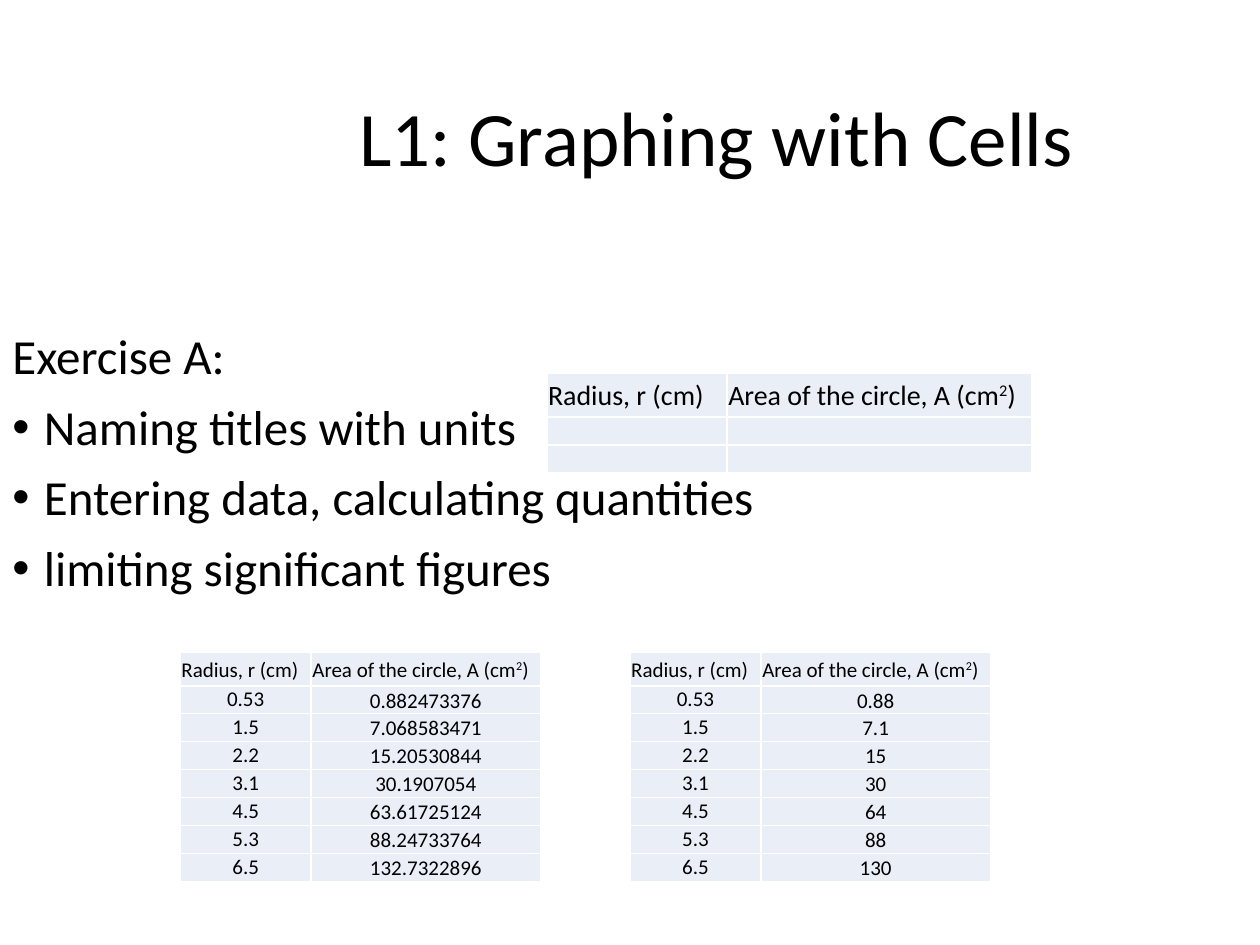
from lxml.etree import SubElement as Sub
from pptx import Presentation
from pptx.dml.color import RGBColor as Rgb
from pptx.enum.text import MSO_ANCHOR as Anchor, PP_ALIGN as Align
from pptx.oxml.ns import qn
from pptx.util import Inches, Pt

WIDE, HIGH = Inches(10), Inches(7.5)
FONT = "Calibri"
HUES = {"text": "000000", "cell": "EAEFF7", "edge": "FFFFFF"}
HEAD = [["Radius, r (cm)"], ["Area of the circle, A (cm", "2", ")"]]
RADII = ["0.53", "1.5", "2.2", "3.1", "4.5", "5.3", "6.5"]
FULL = ["0.882473376", "7.068583471", "15.20530844", "30.1907054",
        "63.61725124", "88.24733764", "132.7322896"]
SHORT = ["0.88", "7.1", "15", "30", "64", "88", "130"]
ITEMS = ["Naming titles with units", "Entering data, calculating quantities",
         "limiting significant figures"]


def across(part):
    return int(WIDE * part / 100)


def down(part):
    return int(HIGH * part / 100)


def add_run(para, text, size, raised=False):
    run = para.add_run()
    run.text = text
    font = run.font
    font.name, font.size = FONT, Pt(size)
    font.color.rgb = Rgb.from_string(HUES["text"])
    if raised:
        run._r.get_or_add_rPr().set("baseline", "30000")


def add_title(slide, text):
    title = slide.shapes.title
    title.left, title.top = across(27.5), down(5.33)
    title.width, title.height = across(70.2), down(19.33)
    frame = title.text_frame
    frame.vertical_anchor = Anchor.MIDDLE
    para = frame.paragraphs[0]
    para.alignment, para.line_spacing = Align.LEFT, 0.9
    add_run(para, text, 44)


def add_bullet(para):
    props = para._p.get_or_add_pPr()
    props.set("marL", str(Inches(0.25)))
    props.set("indent", str(-Inches(0.25)))
    Sub(props, qn("a:buFont")).set("typeface", "Arial")
    Sub(props, qn("a:buChar")).set("char", "•")


def add_list(slide, lead, items):
    box = slide.shapes.add_textbox(0, down(34.53), across(98.8), down(63.47))
    frame = box.text_frame
    frame.word_wrap = True
    first = frame.paragraphs[0]
    first.line_spacing = 0.9
    add_run(first, lead, 28)
    for item in items:
        para = frame.add_paragraph()
        add_bullet(para)
        para.line_spacing, para.space_before = 0.9, Pt(10)
        add_run(para, item, 28)


def style_cell(cell):
    cell.margin_left = cell.margin_right = cell.margin_top = Inches(0.01)
    cell.margin_bottom = 0
    props = cell._tc.get_or_add_tcPr()
    for side in ("lnL", "lnR", "lnT", "lnB"):
        line = Sub(props, qn(f"a:{side}"), w=str(Pt(1)))
        paint = Sub(line, qn("a:solidFill"))
        Sub(paint, qn("a:srgbClr")).set("val", HUES["edge"])
    cell.fill.solid()
    cell.fill.fore_color.rgb = Rgb.from_string(HUES["cell"])


def fill_cell(cell, parts, size, align, anchor):
    style_cell(cell)
    cell.vertical_anchor = anchor
    para = cell.text_frame.paragraphs[0]
    para.alignment = align
    for spot, part in enumerate(parts):
        add_run(para, part, size, raised=spot == 1)
    if not parts:
        Sub(para._p, qn("a:endParaRPr")).set("sz", "1000")


def add_grid(slide, left, top, cols, head, size, rows):
    pitch = 2.96
    frame = slide.shapes.add_table(
        len(rows) + 1, len(cols), across(left), down(top),
        across(sum(cols)), down(head + pitch * len(rows)))
    table = frame.table
    table.first_row = table.horz_banding = False
    for col, width in zip(table.columns, cols):
        col.width = across(width)
    for spot, row in enumerate(table.rows):
        row.height = down(pitch if spot else head)
    for spot, parts in enumerate(HEAD):
        fill_cell(table.cell(0, spot), parts, size, Align.LEFT, Anchor.MIDDLE)
    for line, row in enumerate(rows, 1):
        for spot, text in enumerate(row):
            anchor = Anchor.BOTTOM if spot else Anchor.TOP
            fill_cell(table.cell(line, spot), [text] if text else [],
                      size, Align.CENTER, anchor)


def main():
    deck = Presentation()
    deck.slide_width, deck.slide_height = WIDE, HIGH
    slide = deck.slides.add_slide(deck.slide_layouts[5])
    add_list(slide, "Exercise A:", ITEMS)
    add_title(slide, "L1: Graphing with Cells")
    for left, areas in ((14.3, FULL), (50, SHORT)):
        add_grid(slide, left, 69.07, (10.4, 18.2), 3.5, 12,
                 list(zip(RADII, areas)))
    add_grid(slide, 43.4, 39.47, (14.3, 24.2), 4.67, 16, [("", "")] * 2)
    deck.save("out.pptx")


if __name__ == "__main__":
    main()
